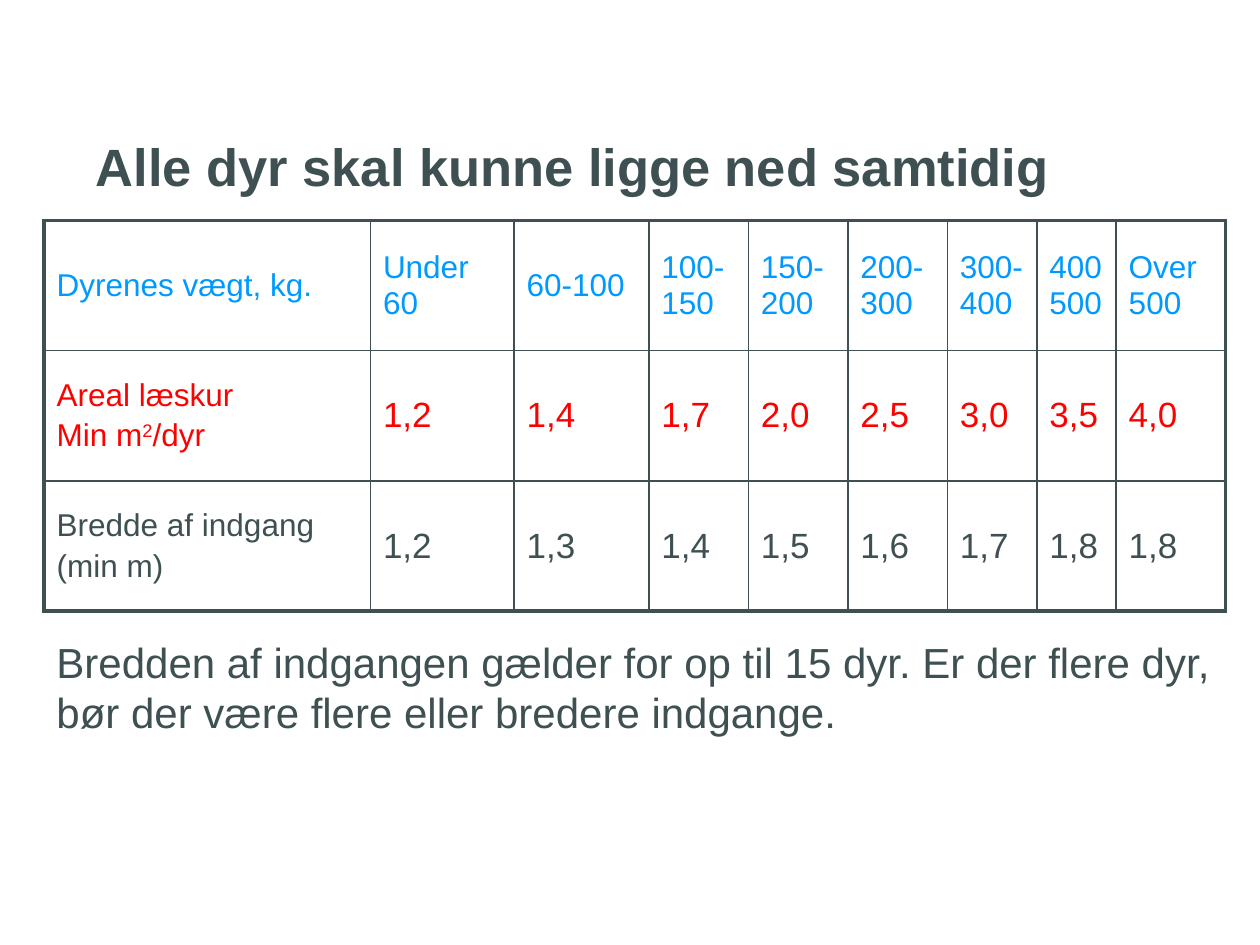
from lxml import etree
from pptx import Presentation
from pptx import util as u
from pptx.dml.color import RGBColor
from pptx.enum import text
from pptx.oxml import ns

SLATE = RGBColor(0x3E, 0x50, 0x52)
BLUE = RGBColor(0x00, 0x99, 0xFF)
RED = RGBColor(0xFF, 0x00, 0x00)

COLUMN_WIDTHS = [2.59, 1.14, 1.07, 0.79, 0.79, 0.79, 0.71, 0.63, 0.87]
ROWS = [
    (BLUE, 18, ["Dyrenes vægt, kg.", "Under 60", "60-100", "100-150", "150-200",
                "200-300", "300-400", "400500", "Over 500"]),
    (RED, 20, ["Areal læskur\nMin m^2^/dyr", "1,2", "1,4", "1,7", "2,0",
               "2,5", "3,0", "3,5", "4,0"]),
    (SLATE, 20, ["Bredde af indgang\n(min m)", "1,2", "1,3", "1,4", "1,5",
                 "1,6", "1,7", "1,8", "1,8"]),
]


class SlideBuilder:
    font = "Arial"
    label_size = 18
    inner_line, outer_line = 1, 2.25

    def __init__(self, prs):
        self.s = prs.slides.add_slide(prs.slide_layouts[5])

    def place(self, sp, left, top, width, height):
        sp.left, sp.top = u.Inches(left), u.Inches(top)
        sp.width, sp.height = u.Inches(width), u.Inches(height)

    def style(self, r, size, color, bold=False):
        r.font.name = self.font
        r.font.size = u.Pt(size)
        r.font.bold = bold
        r.font.color.rgb = color

    def title(self, words, *box):
        sp = self.s.shapes.title
        self.place(sp, *box)
        tf = sp.text_frame
        tf.text = words
        tf.word_wrap = True
        tf.auto_size = text.MSO_AUTO_SIZE.NONE
        tf.vertical_anchor = text.MSO_ANCHOR.MIDDLE
        p = tf.paragraphs[0]
        p.alignment = text.PP_ALIGN.LEFT
        self.style(p.runs[0], 30, SLATE, True)

    def note(self, words, *box):
        sp = self.s.shapes.add_textbox(*map(u.Inches, box))
        tf = sp.text_frame
        tf.text = words
        tf.word_wrap = True
        tf.auto_size = text.MSO_AUTO_SIZE.SHAPE_TO_FIT_TEXT
        self.style(tf.paragraphs[0].runs[0], 24, SLATE)

    def border(self, cell, outer_sides):
        tcPr = cell._tc.get_or_add_tcPr()
        for i, side in enumerate("LRTB"):
            width = self.outer_line if side in outer_sides else self.inner_line
            ln = etree.Element(ns.qn(f"a:ln{side}"), w=str(u.Pt(width)))
            fill = etree.SubElement(ln, ns.qn("a:solidFill"))
            etree.SubElement(fill, ns.qn("a:srgbClr"), val=str(SLATE))
            tcPr.insert(i, ln)

    def fill_cell(self, cell, words, size, color):
        cell.fill.background()
        cell.vertical_anchor = text.MSO_ANCHOR.MIDDLE
        tf = cell.text_frame
        for i, line in enumerate(words.split("\n")):
            p = tf.add_paragraph() if i else tf.paragraphs[0]
            if i:
                p.space_before = u.Pt(3)
            for j, part in enumerate(line.split("^")):
                r = p.add_run()
                r.text = part
                self.style(r, size, color)
                if j % 2:
                    r.font._element.set("baseline", "30000")

    def table(self, rows, widths, left, top, width, height):
        frame = self.s.shapes.add_table(
            len(rows), len(widths), *map(u.Inches, (left, top, width, height)))
        table = frame.table
        table.first_row = table.horz_banding = False
        for column, column_width in zip(table.columns, widths):
            column.width = u.Inches(column_width)
        last_row, last_col = len(rows) - 1, len(widths) - 1
        for y, (color, value_size, values) in enumerate(rows):
            for x, words in enumerate(values):
                cell = table.cell(y, x)
                self.fill_cell(cell, words, value_size if x else self.label_size, color)
                edges = {"L": x == 0, "R": x == last_col, "T": y == 0, "B": y == last_row}
                self.border(cell, [side for side, outer in edges.items() if outer])


def main():
    prs = Presentation()
    prs.slide_width, prs.slide_height = u.Inches(10), u.Inches(7.5)
    builder = SlideBuilder(prs)
    builder.title("Alle dyr skal kunne ligge ned samtidig", 0.66, 0.69, 8.59, 1.25)
    builder.table(ROWS, COLUMN_WIDTHS, 0.35, 1.75, 9.37, 3.1)
    builder.note("Bredden af indgangen gælder for op til 15 dyr. Er der flere dyr, "
                 "bør der være flere eller bredere indgange.", 0.35, 5, 9.37, 0.91)
    prs.save("out.pptx")


if __name__ == "__main__":
    main()
